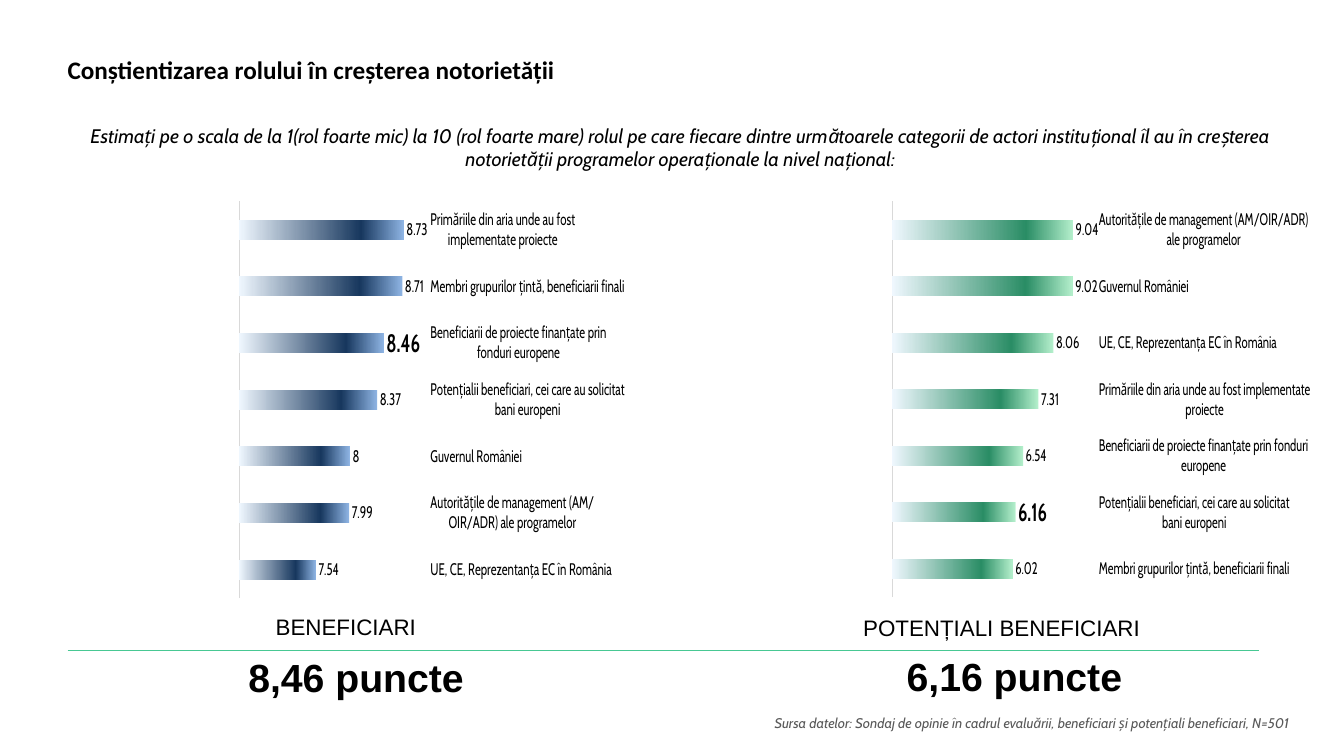
import pptx
import pptx.util
import pptx.chart.data
import pptx.dml.color
import pptx.enum.chart
import pptx.enum.shapes
import pptx.enum.text
import pptx.oxml
import lxml.etree
from pptx.util import Inches

COLORS = {"black": "000000", "source": "595959", "axis": "D9D9D9", "rule": "47C893",
          "pale": "EFF7FE", "navy": "17375E", "blue": "8EB4E3", "green": "2A8D65", "mint": "B4EFCC"}
ALIGN = pptx.enum.text.PP_ALIGN
MIDDLE = pptx.enum.text.MSO_ANCHOR.MIDDLE


def style(font, size, name, color="black", bold=False, italic=False):
    font.size, font.name, font.bold, font.italic = pptx.util.Pt(size), name, bold, italic
    font.color.rgb = pptx.dml.color.RGBColor.from_string(COLORS[color])


def add_text(box, text, size, name, align=ALIGN.CENTER, side=0.0, anchor=MIDDLE, **look):
    tf = s.shapes.add_textbox(*map(Inches, box)).text_frame
    tf.word_wrap = True
    tf.vertical_anchor = anchor
    tf.margin_left = tf.margin_right = Inches(side)
    p = tf.paragraphs[0]
    p.text, p.alignment = text, align
    style(p.font, size, name, **look)


prs = pptx.Presentation()
prs.slide_width, prs.slide_height = Inches(13.33), Inches(7.5)
s = prs.slides.add_slide(prs.slide_layouts[5])

title = s.shapes.title
title.left, title.top, title.width, title.height = map(Inches, (0.67, 0.3, 12, 0.78))
tf = title.text_frame
tf.margin_left = tf.margin_right = tf.margin_top = tf.margin_bottom = 0
tf.vertical_anchor = MIDDLE
p = tf.paragraphs[0]
p.text, p.alignment = "Conștientizarea rolului în creșterea notorietății", ALIGN.LEFT
style(p.font, 18, "Calibri", bold=True)

TOP = pptx.enum.text.MSO_ANCHOR.TOP
add_text((0.48, 1.18, 12.54, 0.57),
         "Estimați pe o scala de la 1(rol foarte mic) la 10 (rol foarte mare) rolul pe care fiecare "
         "dintre următoarele categorii de actori instituțional îl au în creșterea notorietății "
         "programelor operaționale la nivel național:", 14, "Cabin", side=0.1, anchor=TOP, italic=True)
add_text((5.24, 7.04, 7.64, 0.27),
         "Sursa datelor: Sondaj de opinie în cadrul evaluării, beneficiari și potențiali beneficiari, N=501",
         10, "Cabin", ALIGN.RIGHT, side=0.1, anchor=TOP, color="source", italic=True)

TOWN_HALLS = "Primăriile din aria unde au fost implementate proiecte"
TARGET_GROUPS = "Membri grupurilor țintă, beneficiarii finali"
BENEFICIARIES = "Beneficiarii de proiecte finanțate prin fonduri europene"
POTENTIAL = "Potențialii beneficiari, cei care au solicitat bani europeni"
GOVERNMENT = "Guvernul României"
AUTHORITIES = "Autoritățile de management (AM/OIR/ADR) ale programelor"
EU = "UE, CE, Reprezentanța EC în România"

charts = [
    ((0.37, 1.86, 5.83, 4.34), 0.465, (6.5, 9), ("navy", "blue"), 2,
     {TOWN_HALLS: 8.73, TARGET_GROUPS: 8.71, BENEFICIARIES: 8.46, POTENTIAL: 8.37,
      GOVERNMENT: 8, AUTHORITIES: 7.99, EU: 7.54}),
    ((6.74, 1.86, 6.26, 4.33), 0.478, (0, 10), ("green", "mint"), 5,
     {AUTHORITIES: 9.04, GOVERNMENT: 9.02, EU: 8.06, TOWN_HALLS: 7.31,
      BENEFICIARIES: 6.54, POTENTIAL: 6.16, TARGET_GROUPS: 6.02}),
]
for box, plot_w, limits, (dark, light), key, scores in charts:
    data = pptx.chart.data.CategoryChartData()
    data.categories = list(scores)
    data.add_series("Series 1", list(scores.values()))
    chart = s.shapes.add_chart(pptx.enum.chart.XL_CHART_TYPE.BAR_CLUSTERED,
                               *map(Inches, box), data).chart
    chart.has_legend = chart.has_title = False
    style(chart.font, 10, "Cabin")

    axis = chart.category_axis
    axis.reverse_order = True
    axis.major_tick_mark = axis.minor_tick_mark = pptx.enum.chart.XL_TICK_MARK.NONE
    axis.tick_label_position = pptx.enum.chart.XL_TICK_LABEL_POSITION.HIGH
    style(axis.tick_labels.font, 12, "Cabin")
    axis.format.line.width = pptx.util.Pt(0.75)
    axis.format.line.color.rgb = pptx.dml.color.RGBColor.from_string(COLORS["axis"])
    values = chart.value_axis
    values.minimum_scale, values.maximum_scale = limits
    values.has_major_gridlines = values.visible = False

    plot = chart.plots[0]
    plot.gap_width, plot.vary_by_categories = 182, False
    series = plot.series[0]
    stops = "".join(f'<a:gs pos="{pos}"><a:srgbClr val="{COLORS[c]}"/></a:gs>'
                    for pos, c in ((0, "pale"), (74000, dark), (100000, light)))
    fill = pptx.oxml.parse_xml(
        '<a:gradFill xmlns:a="http://schemas.openxmlformats.org/drawingml/2006/main" rotWithShape="1">'
        f'<a:gsLst>{stops}</a:gsLst><a:lin ang="0" scaled="0"/></a:gradFill>')
    series.format.fill.background()
    sp_pr = series.format.fill._xPr
    sp_pr.replace(sp_pr[0], fill)

    labels = series.data_labels
    labels.show_value = True
    labels.position = pptx.enum.chart.XL_LABEL_POSITION.OUTSIDE_END
    style(labels.font, 12, "Cabin")
    label = series.points[key].data_label
    style(label.font, 18, "Cabin", bold=True)
    label.position = pptx.enum.chart.XL_LABEL_POSITION.OUTSIDE_END

    place = "".join(f'<c:{tag} val="{val}"/>' for tag, val in (
        ("layoutTarget", "inner"), ("xMode", "edge"), ("yMode", "edge"),
        ("x", 0.508), ("y", 0.032), ("w", plot_w), ("h", 0.907)))
    layout = pptx.oxml.parse_xml(
        '<c:layout xmlns:c="http://schemas.openxmlformats.org/drawingml/2006/chart">'
        f'<c:manualLayout>{place}</c:manualLayout></c:layout>')
    area = chart._chartSpace.chart.plotArea
    for old in area.xpath("c:layout"):
        area.remove(old)
    area.insert(0, layout)

rule = s.shapes.add_connector(pptx.enum.shapes.MSO_CONNECTOR.STRAIGHT,
                              Inches(0.67), Inches(6.45), Inches(12.49), Inches(6.45))
rule.line.width = pptx.util.Pt(0.75)
rule.line.color.rgb = pptx.dml.color.RGBColor.from_string(COLORS["rule"])
lxml.etree.SubElement(rule._element.spPr, pptx.oxml.ns.qn("a:effectLst"))

for group, group_box, score, score_box in (
        ("BENEFICIARI", (2.34, 6.03, 2.18, 0.37), "8,46 puncte ", (1.9, 6.43, 3.37, 0.57)),
        ("POTENȚIALI BENEFICIARI", (8.47, 6.04, 2.93, 0.37), "6,16 puncte ", (8.43, 6.42, 3.37, 0.57))):
    add_text(group_box, group, 16, "Arial")
    add_text(score_box, score, 28, "Arial", bold=True)

prs.save("out.pptx")
